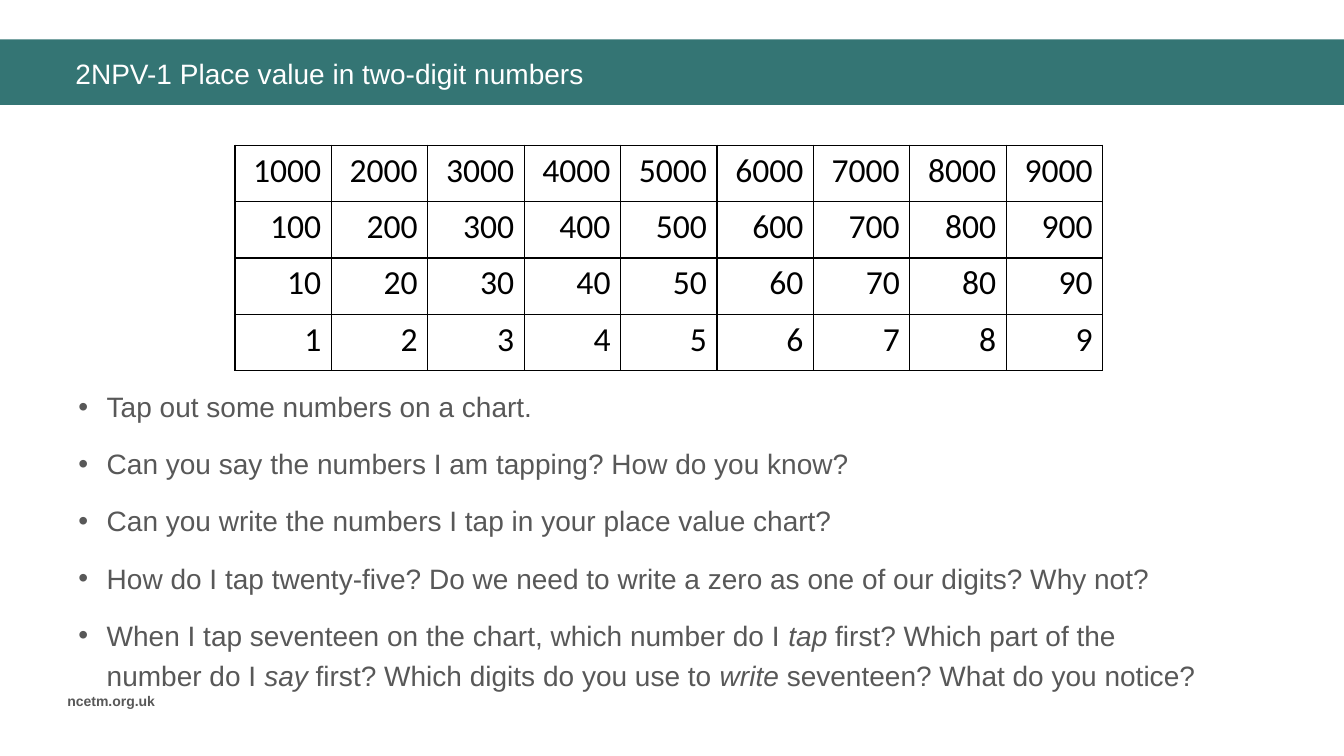
from lxml import etree
from pptx import Presentation
from pptx.dml import color
from pptx.enum import shapes, text
from pptx.oxml import ns
from pptx.util import Inches, Pt

TEAL, GREY, WHITE, BLACK = "347574", "585858", "FFFFFF", "000000"

QUESTIONS = [
    ["Tap out some numbers on a chart."],
    ["Can you say the numbers I am tapping? How do you know?"],
    ["Can you write the numbers I tap in your place value chart?"],
    ["How do I tap twenty-five? Do we need to write a zero as one of our digits? Why not?"],
    ["When I tap seventeen on the chart, which number do I ", "tap",
     " first? Which part of the number do I ", "say",
     " first? Which digits do you use to ", "write ",
     "seventeen? What do you notice?"],
]


def rgb(value):
    """Return the colour for a hex string."""
    return color.RGBColor.from_string(value)


def add_xml(parent, tag, **attributes):
    """Append a DrawingML element and return it."""
    return etree.SubElement(parent, ns.qn(tag), attributes)


def write(paragraph, words, size=20, fill=GREY, face="Arial", bold=False, italic=False):
    """Add a formatted run to a paragraph."""
    run = paragraph.add_run()
    run.text = words
    font = run.font
    font.name, font.size, font.bold, font.italic = face, Pt(size), bold, italic
    font.color.rgb = rgb(fill)


def add_text_frame(slide, left, top, width, height, anchor=text.MSO_ANCHOR.TOP):
    """Add a wrapping text box and return its frame."""
    box = slide.shapes.add_textbox(Inches(left), Inches(top), Inches(width), Inches(height))
    frame = box.text_frame
    frame.word_wrap = True
    frame.vertical_anchor = anchor
    return frame


def add_banner(slide):
    """Add the full-width heading band."""
    banner = slide.shapes.add_shape(
        shapes.MSO_SHAPE.RECTANGLE, 0, Inches(0.39), Inches(13.33), Inches(0.65))
    banner.shadow.inherit = False
    banner.fill.solid()
    banner.fill.fore_color.rgb = rgb(TEAL)
    banner.line.fill.background()


def add_cell_borders(cell):
    """Draw a thin black line on each side of a cell."""
    properties = cell._tc.get_or_add_tcPr()
    for position, side in enumerate(("a:lnL", "a:lnR", "a:lnT", "a:lnB")):
        line = add_xml(properties, side, w=str(Pt(1)))
        add_xml(add_xml(line, "a:solidFill"), "a:srgbClr", val=BLACK)
        properties.insert(position, line)


def add_place_value_chart(slide):
    """Add the chart of thousands, hundreds, tens and ones."""
    places, digits = (1000, 100, 10, 1), range(1, 10)
    chart = slide.shapes.add_table(
        len(places), len(digits), Inches(2.33), Inches(1.44), Inches(8.61), Inches(2.24)).table
    chart.first_row = chart.horz_banding = False
    for row, place in enumerate(places):
        for column, digit in enumerate(digits):
            cell = chart.cell(row, column)
            cell.fill.background()
            add_cell_borders(cell)
            paragraph = cell.text_frame.paragraphs[0]
            paragraph.alignment = text.PP_ALIGN.RIGHT
            write(paragraph, str(place * digit), size=24, fill=BLACK, face="Calibri")


def add_questions(slide):
    """Add the bulleted questions, with every second run in italics."""
    frame = add_text_frame(slide, 0.68, 3.75, 11.39, 3.24)
    for index, question in enumerate(QUESTIONS):
        paragraph = frame.add_paragraph() if index else frame.paragraphs[0]
        paragraph.line_spacing = 1.2
        paragraph.space_before = Pt(6 if index else 0)
        paragraph.space_after = Pt(6)
        properties = paragraph._p.get_or_add_pPr()
        properties.set("marL", str(Inches(0.28)))
        properties.set("indent", str(Inches(-0.28)))
        add_xml(add_xml(properties, "a:buClr"), "a:srgbClr", val=GREY)
        add_xml(properties, "a:buFont", typeface="Arial")
        add_xml(properties, "a:buChar", char="•")
        for part, words in enumerate(question):
            write(paragraph, words, italic=part % 2 == 1)


def main():
    """Build and save the slide."""
    deck = Presentation()
    deck.slide_width, deck.slide_height = Inches(13.33), Inches(7.5)
    slide = deck.slides.add_slide(deck.slide_layouts[6])
    add_banner(slide)
    footer = add_text_frame(slide, 0.57, 6.82, 1.21, 0.27)
    write(footer.paragraphs[0], "ncetm.org.uk", size=10, bold=True)
    title = add_text_frame(slide, 0.65, 0.49, 12.32, 0.47, text.MSO_ANCHOR.MIDDLE)
    write(title.paragraphs[0], "2NPV-1 Place value in two-digit numbers", fill=WHITE)
    add_place_value_chart(slide)
    add_questions(slide)
    deck.save("out.pptx")


if __name__ == "__main__":
    main()
